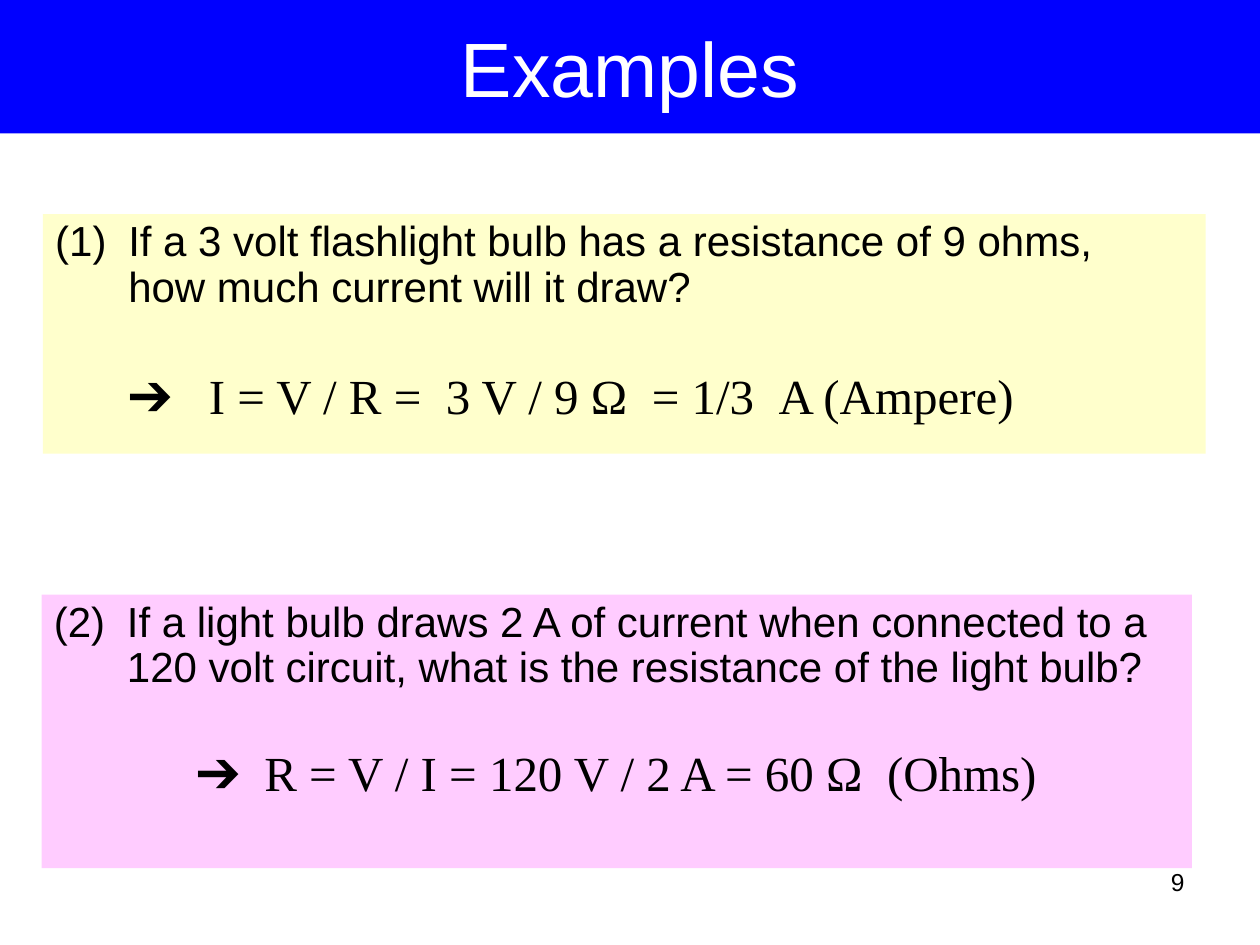
from pptx import Presentation
from pptx import util as u
from pptx.dml.color import RGBColor
from pptx.enum import shapes, text

COLORS = {"title": "0000FF", "first": "FFFFCC", "second": "FFCCFF",
          "light": "FFFFFF", "dark": "000000"}
QUESTION = {"name": "Arial", "size": u.Pt(24)}
ANSWER = {"name": "Times New Roman", "size": u.Pt(28)}


def inches(*lengths):
    """Turn plain numbers into lengths."""
    return [u.Inches(length) for length in lengths]


def add_panel(page, box, fill):
    """Add a borderless filled rectangle and return its text frame."""
    panel = page.shapes.add_shape(shapes.MSO_SHAPE.RECTANGLE, *inches(*box))
    panel.shadow.inherit = False
    panel.fill.solid()
    panel.fill.fore_color.rgb = RGBColor.from_string(COLORS[fill])
    panel.line.fill.background()
    panel.text_frame.word_wrap = True
    return panel.text_frame


def write(para, words, font, color="dark", **layout):
    """Write words into a paragraph with the given font and layout."""
    para.text = words
    for name, value in layout.items():
        setattr(para, name, value)
    for span in para.runs:
        for name, value in font.items():
            setattr(span.font, name, value)
        span.font.color.rgb = RGBColor.from_string(COLORS[color])


def hang(para, margin, indent):
    """Give a paragraph a hanging indent."""
    properties = para._p.get_or_add_pPr()
    properties.set("marL", str(u.Inches(margin)))
    properties.set("indent", str(u.Inches(-indent)))


def add_title(page, box, words):
    """Add the title band."""
    frame = add_panel(page, box, "title")
    frame.vertical_anchor = text.MSO_ANCHOR.MIDDLE
    write(frame.paragraphs[0], words, {"name": "Arial", "size": u.Pt(44)},
          "light", alignment=text.PP_ALIGN.CENTER)


def add_example(page, box, fill, question, answer, margin, indent, gap):
    """Add a numbered question with its worked answer."""
    frame = add_panel(page, box, fill)
    frame.vertical_anchor = text.MSO_ANCHOR.TOP
    layout = {"alignment": text.PP_ALIGN.LEFT, "line_spacing": 0.9}
    first, second = frame.paragraphs[0], frame.add_paragraph()
    write(first, question, QUESTION, **layout)
    hang(first, 0.58, 0.58)
    write(second, answer, ANSWER, space_before=u.Pt(gap), **layout)
    hang(second, margin, indent)


def add_page_number(page, box, number):
    """Add the page number at the right of its box."""
    frame = page.shapes.add_textbox(*inches(*box)).text_frame
    frame.word_wrap = True
    write(frame.paragraphs[0], number, {"name": "Arial", "size": u.Pt(14)},
          alignment=text.PP_ALIGN.RIGHT)


def main():
    """Build the slide and save it."""
    deck = Presentation()
    deck.slide_width, deck.slide_height = inches(10, 7.5)
    page = deck.slides.add_slide(deck.slide_layouts[6])
    add_title(page, (0, 0, 10, 1.06), "Examples")
    add_example(
        page, (0.34, 1.7, 9.23, 1.9), "first",
        "(1)\tIf a 3 volt flashlight bulb has a resistance of 9 ohms,\v"
        "how much current will it draw?",
        "➔\tI = V / R =  3 V / 9 Ω  = 1/3  A (Ampere)",
        margin=1.22, indent=0.64, gap=35)
    add_example(
        page, (0.33, 4.72, 9.13, 2.17), "second",
        "(2)\tIf a light bulb draws 2 A of current when connected to a "
        "120 volt circuit, what is the resistance of the light bulb?",
        "➔\tR = V / I = 120 V / 2 A = 60 Ω  (Ohms)",
        margin=1.67, indent=0.54, gap=33)
    add_page_number(page, (7.17, 6.83, 2.33, 0.52), "9")
    deck.save("out.pptx")


if __name__ == "__main__":
    main()
